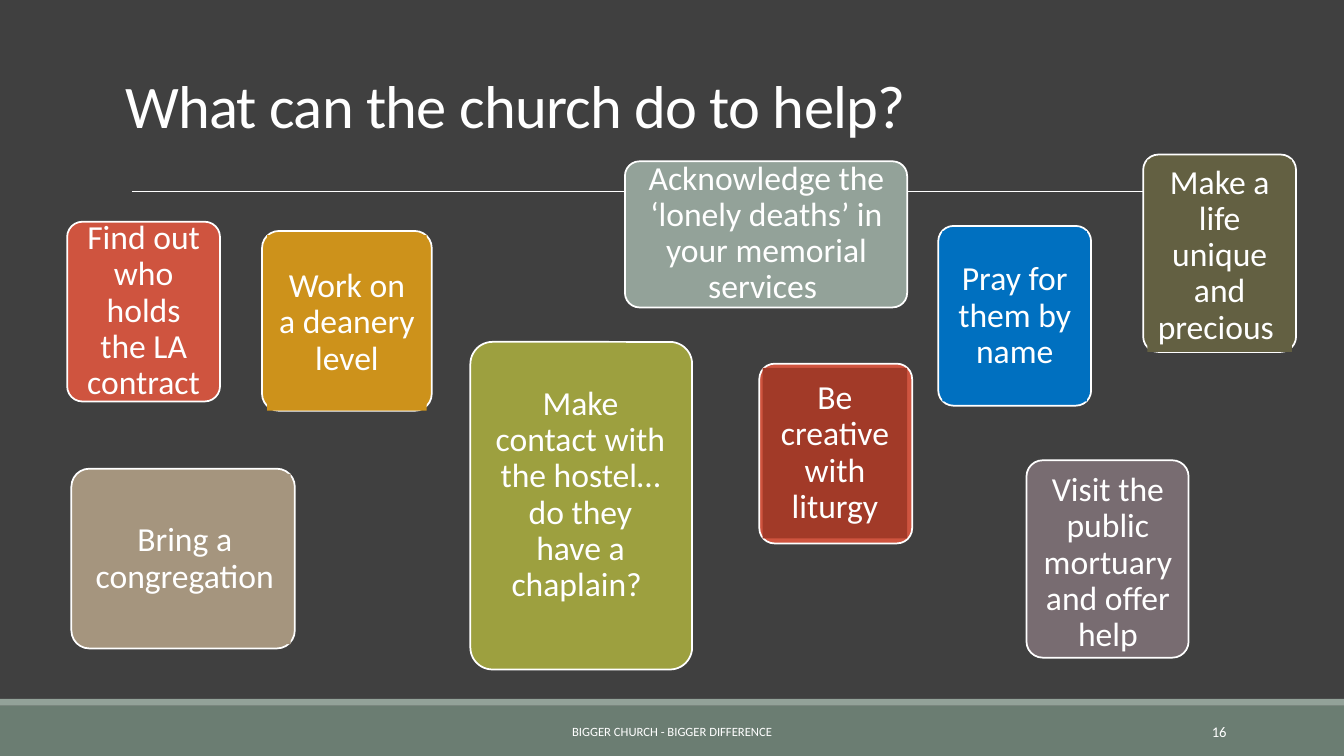
import dataclasses

import lxml.etree
import pptx
import pptx.dml.color
import pptx.enum.shapes
import pptx.enum.text
import pptx.oxml.ns
import pptx.util

ALIGN = pptx.enum.text.PP_ALIGN
ANCHOR = pptx.enum.text.MSO_ANCHOR
SHAPE = pptx.enum.shapes.MSO_SHAPE


@dataclasses.dataclass(frozen=True)
class Theme:
    """Colours, font and type sizes of the deck."""
    font: str = "Calibri"
    background: str = "404040"
    white: str = "FFFFFF"
    footer_green: str = "6B7D72"
    sage: str = "93A299"
    red: str = "CF543F"
    dark_red: str = "A23A28"
    blue: str = "0070C0"
    olive: str = "9DA03F"
    amber: str = "CD921B"
    mauve: str = "786C71"
    taupe: str = "A5957E"
    moss: str = "636042"
    title_size: float = 43.2
    card_size: float = 24
    footer_size: float = 9
    number_size: float = 10.5


def rgb(value):
    """Turn a hex string into a colour."""
    return pptx.dml.color.RGBColor.from_string(value)


def write(sp, text, *, font, size, color, align=ALIGN.LEFT, anchor=ANCHOR.MIDDLE,
          line_spacing=1.0, tracking=0, inset=(0.1, 0.05)):
    """Fill a shape with one formatted paragraph."""
    tf = sp.text_frame
    tf.word_wrap = True
    tf.auto_size = pptx.enum.text.MSO_AUTO_SIZE.NONE
    tf.vertical_anchor = anchor
    tf.margin_left = tf.margin_right = pptx.util.Inches(inset[0])
    tf.margin_top = tf.margin_bottom = pptx.util.Inches(inset[1])
    p = tf.paragraphs[0]
    p.alignment = align
    p.line_spacing = line_spacing
    r = p.add_run()
    r.text = text
    r.font.name = font
    r.font.size = pptx.util.Pt(size)
    r.font.color.rgb = rgb(color)
    if tracking:
        r.font._element.set("spc", str(round(tracking * 100)))


class Deck:
    """Draws on the current slide, on a grid of 16 columns by 9 rows."""

    def __init__(self, theme):
        """Open a wide presentation."""
        self.theme = theme
        self.prs = pptx.Presentation()
        self.prs.slide_width = pptx.util.Inches(13.333)
        self.prs.slide_height = pptx.util.Inches(7.5)
        self.s = None

    def grid(self, col, row, cols, rows):
        """Convert grid units to slide lengths."""
        col_width = self.prs.slide_width / 16
        row_height = self.prs.slide_height / 9
        return (round(col * col_width), round(row * row_height),
                round(cols * col_width), round(rows * row_height))

    def slide(self):
        """Start a title-only slide."""
        self.s = self.prs.slides.add_slide(self.prs.slide_layouts[5])
        fill = self.s.background.fill
        fill.solid()
        fill.fore_color.rgb = rgb(self.theme.background)

    def title(self, text, box):
        """Place and format the title placeholder."""
        sp = self.s.shapes.title
        sp.left, sp.top, sp.width, sp.height = self.grid(*box)
        write(sp, text, font=self.theme.font, size=self.theme.title_size,
              color=self.theme.white, anchor=ANCHOR.BOTTOM, line_spacing=0.85,
              tracking=-0.5)

    def shape(self, kind, box, fill, outline=None):
        """Add a filled preset shape."""
        sp = self.s.shapes.add_shape(kind, *self.grid(*box))
        sp.shadow.inherit = False
        sp.fill.solid()
        sp.fill.fore_color.rgb = rgb(fill)
        if outline:
            sp.line.color.rgb = rgb(outline)
            sp.line.width = pptx.util.Pt(1.25)
        else:
            sp.line.fill.background()
        return sp

    def rule(self, start, end, row):
        """Add a thin horizontal line."""
        x1, y, x2, _ = self.grid(start, row, end, 0)
        line = self.s.shapes.add_connector(
            pptx.enum.shapes.MSO_CONNECTOR.STRAIGHT, x1, y, x2, y)
        line.line.color.rgb = rgb(self.theme.white)
        line.line.width = pptx.util.Pt(0.5)
        lxml.etree.SubElement(line._element.spPr, pptx.oxml.ns.qn("a:effectLst"))

    def text(self, text, box, size, fill=None, **style):
        """Add a text box, filled on request."""
        sp = self.s.shapes.add_textbox(*self.grid(*box))
        if fill:
            sp.fill.solid()
            sp.fill.fore_color.rgb = rgb(fill)
        write(sp, text, font=self.theme.font, size=size, color=self.theme.white, **style)

    def card(self, text, box, color, label_box, label_fill=None):
        """Add a rounded card with its label panel."""
        sp = self.shape(SHAPE.ROUNDED_RECTANGLE, box, color, self.theme.white)
        sp.adjustments[0] = 0.1
        self.text(text, label_box, self.theme.card_size, label_fill,
                  align=ALIGN.CENTER, line_spacing=0.9, inset=(0.1, 0.1))


def main():
    """Build and save the slide."""
    theme = Theme()
    deck = Deck(theme)
    deck.slide()
    deck.shape(SHAPE.RECTANGLE, (0, 8.4, 16, 0.6), theme.footer_green)
    deck.shape(SHAPE.RECTANGLE, (0, 8.32, 16, 0.08), theme.sage)
    deck.rule(1.57, 14.65, 2.28)
    deck.title("What can the church do to help?", (1.37, 1.03, 10.33, 0.71))
    deck.text("BIGGER CHURCH - BIGGER DIFFERENCE", (4.84, 8.47, 6.32, 0.48),
              theme.footer_size, align=ALIGN.CENTER)
    deck.text("16", (13, 8.47, 1.72, 0.48), theme.number_size, align=ALIGN.RIGHT)

    cards = [
        ("Find out who holds the LA contract", (0.8, 2.64, 1.82, 2.14), theme.red,
         (0.85, 2.69, 1.72, 2.03), None),
        ("Pray for them by name", (11.17, 2.69, 1.82, 2.14), theme.blue,
         (11.22, 2.75, 1.72, 2.03), theme.blue),
        ("Make contact with the hostel…do they have a chaplain? ",
         (5.6, 4.07, 2.64, 3.9), theme.olive, (5.75, 4.33, 2.32, 3.13), None),
        ("Work on a deanery level", (3.12, 2.75, 2.02, 2.14), theme.amber,
         (3.18, 2.8, 1.9, 2.09), theme.amber),
        ("Be creative with liturgy", (9.04, 4.33, 1.82, 2.14), theme.red,
         (9.08, 4.38, 1.72, 2.03), theme.dark_red),
        ("Visit the public mortuary and offer help", (12.22, 5.48, 1.93, 2.35),
         theme.mauve, (12.28, 5.69, 1.82, 2.03), theme.mauve),
        ("Bring a congregation", (0.85, 5.58, 2.66, 2.14), theme.taupe,
         (0.94, 5.64, 2.52, 2.03), theme.taupe),
        ("Make a life unique and precious ", (13.61, 1.84, 1.82, 2.35), theme.moss,
         (13.66, 1.9, 1.72, 2.29), theme.moss),
        ("Acknowledge the ‘lonely deaths’ in your memorial services ",
         (7.44, 1.92, 3.36, 1.74), theme.sage, (7.54, 1.96, 3.17, 1.64), theme.sage),
    ]
    for card in cards:
        deck.card(*card)
    deck.prs.save("out.pptx")


if __name__ == "__main__":
    main()
